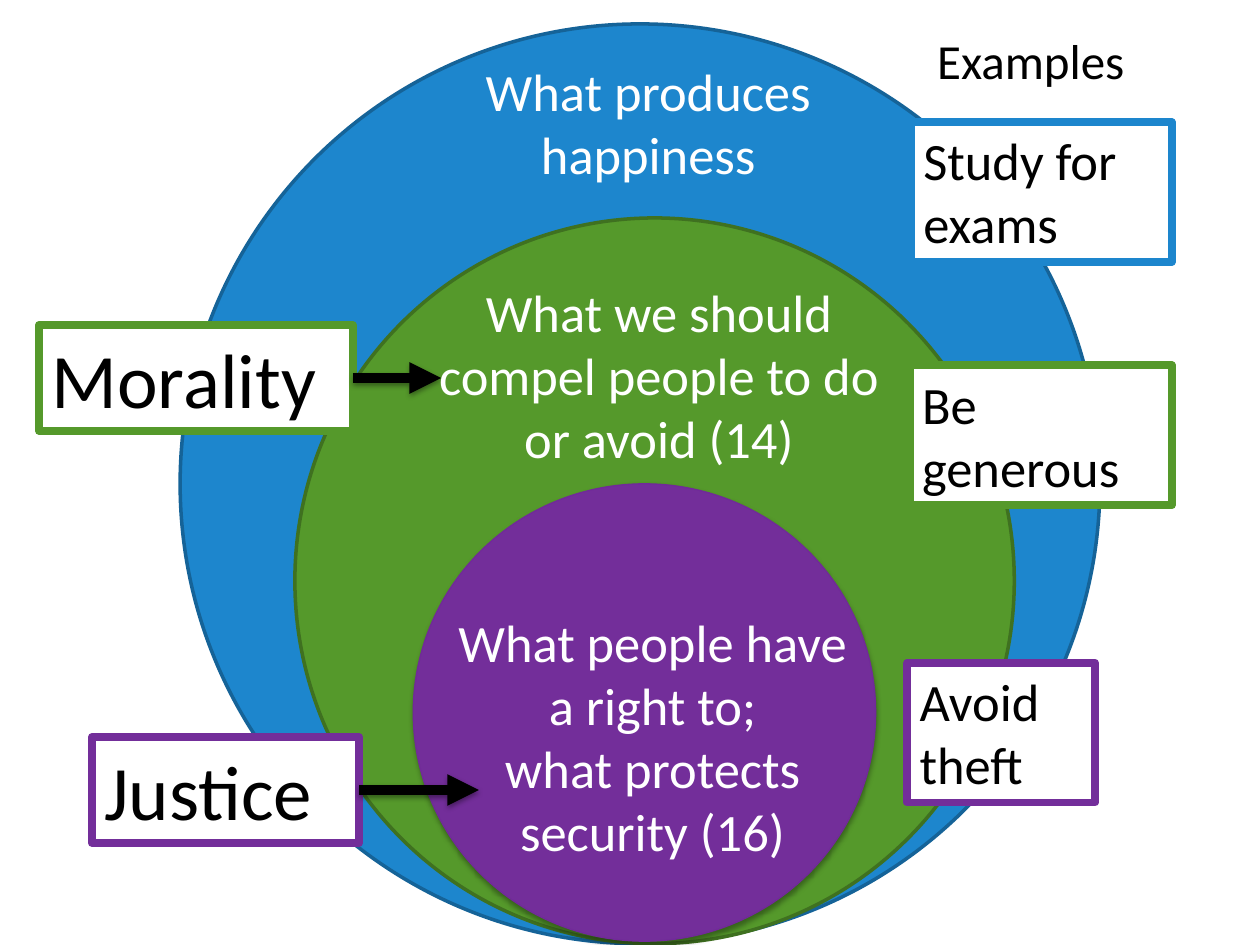
import pptx
import pptx.util
import pptx.dml.color
import pptx.enum.shapes
import pptx.enum.text
import pptx.oxml
import pptx.oxml.ns

Inches, Pt = pptx.util.Inches, pptx.util.Pt
KIND = pptx.enum.shapes.MSO_SHAPE
ALIGN = pptx.enum.text.PP_ALIGN

FONT = "Calibri"
HUES = {
    "blue": "1D86CD", "navy": "156398",
    "green": "55992B", "moss": "3F7120",
    "purple": "732E9A", "plum": "712A99",
    "white": "FFFFFF", "black": "000000",
}

# box (left, top, width, height), fill, line, line width, shadow opacity
RINGS = [
    ((1.43, 0.19, 7.3, 7.3), "blue", "navy", 2, 0),
    ((2.34, 1.73, 5.71, 5.76), "green", "moss", 2, 0),
    ((3.28, 3.84, 3.67, 3.63), "purple", "plum", 0.75, 35),
]
# box, paragraphs, size, colour, alignment
NOTES = [
    ((3.5, 0.42, 3.29, 1.11), ["What produces happiness"], 30, "white", ALIGN.CENTER),
    ((3.37, 2.17, 3.72, 1.62),
     ["What we should compel people to do or avoid (14)"], 30, "white", ALIGN.CENTER),
    ((3.42, 4.79, 3.52, 2.12),
     ["What people have a right to;", "what protects security (16)"],
     30, "white", ALIGN.CENTER),
    ((7.34, 0.19, 1.96, 0.57), ["Examples"], 28, "black", ALIGN.LEFT),
]
# box, text, frame colour
CASES = [
    ((7.23, 0.97, 2.07, 1.11), "Study for exams", "blue"),
    ((7.22, 2.9, 2.08, 1.11), "Be generous", "green"),
    ((7.2, 5.26, 1.49, 1.11), "Avoid theft", "purple"),
]
# box, text, frame colour, arrow tip
TERMS = [
    ((0.31, 2.58, 2.49, 0.84), "Morality", "green", (3.5, 3)),
    ((0.73, 5.85, 2.12, 0.84), "Justice", "purple", (3.8, 6.27)),
]


def hue(name):
    return pptx.dml.color.RGBColor.from_string(HUES[name])


def node(tag, parent, **attrs):
    child = pptx.oxml.parse_xml(f"<a:{tag} {pptx.oxml.ns.nsdecls('a')}/>")
    for key, value in attrs.items():
        child.set(key, str(value))
    parent.append(child)
    return child


def shade(effects, alpha, dist):
    """Drop a soft shadow straight down; alpha in percent, dist in points."""
    drop = node("outerShdw", effects, blurRad=Pt(3.1), dist=Pt(dist),
                dir=90 * 60000, rotWithShape=0)
    node("alpha", node("srgbClr", drop, val=HUES["black"]), val=alpha * 1000)


def write(shape, lines, size, color, align):
    frame = shape.text_frame
    frame.word_wrap = True
    frame.auto_size = pptx.enum.text.MSO_AUTO_SIZE.SHAPE_TO_FIT_TEXT
    frame.vertical_anchor = pptx.enum.text.MSO_ANCHOR.TOP
    for i, line in enumerate(lines):
        para = frame.add_paragraph() if i else frame.paragraphs[0]
        para.alignment = align
        run = para.add_run()
        run.text = line
        run.font.name, run.font.size = FONT, Pt(size)
        run.font.color.rgb = hue(color)


def draw(slide, kind, box, fill, line, width):
    shape = slide.shapes.add_shape(kind, *map(Inches, box))
    shape.shadow.inherit = False
    shape.fill.solid()
    shape.fill.fore_color.rgb = hue(fill)
    shape.line.color.rgb = hue(line)
    shape.line.width = Pt(width)
    return shape


def label(slide, box, text, size, frame):
    shape = draw(slide, KIND.RECTANGLE, box, "white", frame, 4.5)
    write(shape, [text], size, "black", ALIGN.LEFT)
    return shape


def point(slide, start, tip):
    """Draw an arrow from the right side of a label to the tip."""
    end = [Inches(v) for v in tip]
    arrow = slide.shapes.add_connector(
        pptx.enum.shapes.MSO_CONNECTOR.STRAIGHT, *end, *end)
    arrow.begin_connect(start, 3)
    arrow.line.color.rgb = hue("black")
    arrow.line.width = Pt(6)
    node("tailEnd", arrow.line._get_or_add_ln(), type="triangle")
    shade(node("effectLst", arrow._element.spPr), 38, 1.6)


def main():
    deck = pptx.Presentation()
    deck.slide_width, deck.slide_height = Inches(10), Inches(7.5)
    slide = deck.slides.add_slide(deck.slide_layouts[6])

    for box, fill, line, width, alpha in RINGS:
        ring = draw(slide, KIND.OVAL, box, fill, line, width)
        if alpha:
            shade(ring._element.spPr.find(pptx.oxml.ns.qn("a:effectLst")), alpha, 1.8)
    for box, text, frame, tip in TERMS:
        point(slide, label(slide, box, text, 44, frame), tip)
    for box, *words in NOTES:
        write(slide.shapes.add_textbox(*map(Inches, box)), *words)
    for box, text, frame in CASES:
        label(slide, box, text, 30, frame)

    deck.save("out.pptx")


if __name__ == "__main__":
    main()
